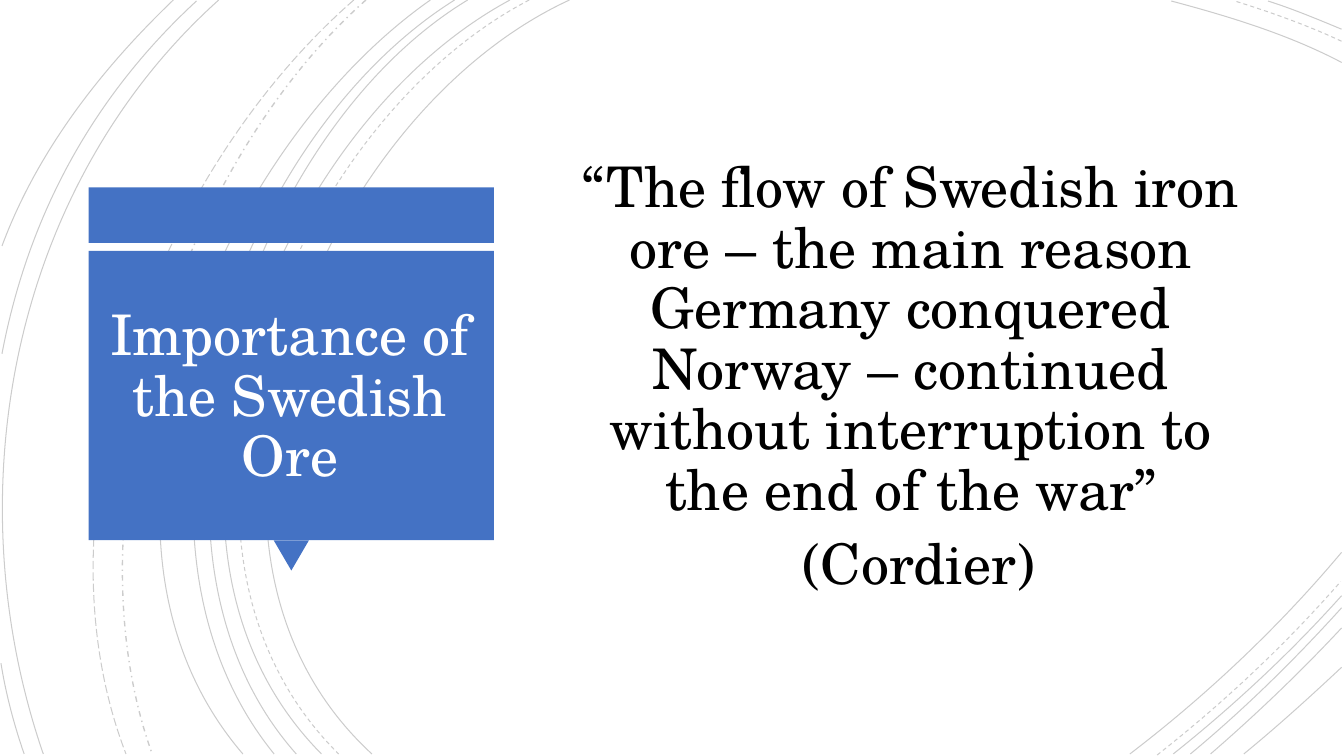
from lxml import etree
from pptx import Presentation
from pptx.dml.color import RGBColor
from pptx.enum import dml, shapes, text
from pptx.oxml.ns import qn
from pptx.util import Inches, Pt

BLUE = RGBColor(0x44, 0x72, 0xC4)
WHITE = RGBColor(0xFF, 0xFF, 0xFF)
BLACK = RGBColor(0x00, 0x00, 0x00)
FONT = "TeX Gyre Schola"

SOLID = dml.MSO_LINE.SOLID
DASH = dml.MSO_LINE.DASH
LONG_DASH = dml.MSO_LINE.LONG_DASH
DASH_DOT = dml.MSO_LINE.DASH_DOT

# Each arc: dash style, then start, two control points and end, in inches
ARCS = [
    (SOLID, (5.65, 0), (3.15, 1.15), (1.43, 5.4), (3.69, 7.48)),
    (SOLID, (13.31, 0.62), (12.78, 0.34), (12.18, 0.16), (11.62, 0.01)),
    (SOLID, (11.21, 7.48), (11.97, 6.9), (12.69, 6.22), (13.31, 5.48)),
    (DASH, (5.25, 0), (2.85, 1.25), (1.23, 5.37), (3.36, 7.48)),
    (DASH, (13.31, 0.41), (12.97, 0.25), (12.6, 0.12), (12.25, 0.01)),
    (DASH, (11.48, 7.49), (12.13, 6.98), (12.75, 6.4), (13.3, 5.77)),
    (SOLID, (5.06, 0), (2.7, 1.27), (1.1, 5.37), (3.19, 7.48)),
    (SOLID, (13.31, 0.29), (13.07, 0.19), (12.83, 0.09), (12.58, 0.01)),
    (SOLID, (11.64, 7.48), (12.23, 7.01), (12.8, 6.48), (13.31, 5.91)),
    (SOLID, (4.64, 0), (2.44, 1.33), (1.1, 5.41), (2.94, 7.48)),
    (SOLID, (11.81, 7.48), (12.34, 7.04), (12.84, 6.55), (13.31, 6.03)),
    (SOLID, (4.51, 0), (2.31, 1.38), (0.97, 5.33), (2.72, 7.48)),
    (SOLID, (12.01, 7.48), (12.46, 7.09), (12.9, 6.67), (13.31, 6.23)),
    (SOLID, (4.27, 0), (2.17, 1.47), (0.53, 5.29), (2.41, 7.48)),
    (SOLID, (12.34, 7.48), (12.67, 7.21), (12.99, 6.92), (13.31, 6.62)),
    (DASH_DOT, (3.63, 0), (1.76, 1.66), (0.65, 5.09), (1.51, 7.48)),
    (LONG_DASH, (3.51, 0), (1.57, 1.69), (0.29, 4.99), (1.25, 7.48)),
    (SOLID, (2.17, 0), (0.11, 1.85), (-0.46, 4.9), (0.43, 7.48)),
    (SOLID, (1.95, 0.01), (0.92, 0.96), (0.28, 2.14), (0.02, 3.51)),
    (SOLID, (0.01, 6.58), (0.06, 6.89), (0.14, 7.19), (0.24, 7.48)),
    (SOLID, (1.72, 0), (1, 0.69), (0.37, 1.5), (0.02, 2.44)),
]


def set_attributes(target, values):
    for name, value in values.items():
        setattr(target, name, value)


def bend(freeform):
    """Turn the three line segments of a freeform into one cubic curve."""
    segments = list(freeform.element.iter(qn("a:lnTo")))
    outline = segments[0].getparent()
    curve = etree.SubElement(outline, qn("a:cubicBezTo"))
    for segment in segments:
        curve.append(segment[0])
        outline.remove(segment)


def add_arcs(slide, left, top):
    """Faint arcs, offset from the given corner."""
    group = slide.shapes.add_group_shape()
    for dash, *controls in ARCS:
        points = [(left + Inches(x), top + Inches(y)) for x, y in controls]
        builder = group.shapes.build_freeform(*points[0], scale=1.0)
        builder.add_line_segments(points[1:], close=False)
        arc = builder.convert_to_shape()
        bend(arc)
        arc.shadow.inherit = False
        arc.fill.background()
        arc.line.color.rgb = BLACK
        set_attributes(arc.line, {
            "width": Pt(1 if dash == DASH_DOT else 0.75), "dash_style": dash})
        color = next(arc.element.spPr.iter(qn("a:srgbClr")))
        etree.SubElement(color, qn("a:alpha"), val="20000")


def fill_placeholder(placeholder, box, paragraphs, color, space_before):
    set_attributes(placeholder, dict(zip(("left", "top", "width", "height"), box)))
    frame = placeholder.text_frame
    frame.text = "\n".join(paragraphs)
    set_attributes(frame, {
        "word_wrap": True,
        "auto_size": text.MSO_AUTO_SIZE.NONE,
        "vertical_anchor": text.MSO_ANCHOR.MIDDLE,
    })
    for paragraph in frame.paragraphs:
        set_attributes(paragraph, {
            "alignment": text.PP_ALIGN.CENTER,
            "line_spacing": 0.9,
            "space_before": Pt(space_before),
        })
        properties = paragraph._p.get_or_add_pPr()
        properties.set("marL", "0")
        properties.set("indent", "0")
        etree.SubElement(properties, qn("a:buNone"))
        for run in paragraph.runs:
            set_attributes(run.font, {"name": FONT, "size": Pt(40)})
            run.font.color.rgb = color
    # Bring the text in front of the shapes drawn so far
    placeholder.element.getparent().append(placeholder.element)


def add_title_panel(slide, left, top, width, height):
    """Blue band, pointer and panel with the title on it."""
    panel_top = top + Inches(0.63)
    panel_height = height - Inches(0.93)
    pointer_width = Inches(0.35)
    rectangle = shapes.MSO_SHAPE.RECTANGLE
    parts = [
        (rectangle, left, top, width, Inches(0.55), 0),
        (shapes.MSO_SHAPE.ISOSCELES_TRIANGLE, left + (width - pointer_width) // 2,
         panel_top + panel_height, pointer_width, Inches(0.3), 180),
        (rectangle, left, panel_top, width, panel_height, 0),
    ]
    group = slide.shapes.add_group_shape()
    for kind, *box, rotation in parts:
        shape = group.shapes.add_shape(kind, *box)
        shape.rotation = rotation
        shape.shadow.inherit = False
        shape.fill.solid()
        shape.fill.fore_color.rgb = BLUE
        shape.line.fill.background()
    title_box = (left + Inches(0.11), panel_top + Inches(0.15),
                 width - Inches(0.25), panel_height - Inches(0.25))
    fill_placeholder(slide.shapes.title, title_box,
                     ["Importance of the Swedish Ore"], WHITE, 0)


def add_quotation(slide, *box):
    quotation = [
        "“The flow of Swedish iron ore – the main reason Germany conquered Norway – "
        "continued without interruption to the end of the war”",
        " (Cordier)",
    ]
    fill_placeholder(slide.placeholders[1], box, quotation, BLACK, 10)


def main():
    presentation = Presentation()
    set_attributes(presentation, {
        "slide_width": Inches(40 / 3), "slide_height": Inches(7.5)})
    slide = presentation.slides.add_slide(presentation.slide_layouts[1])
    add_arcs(slide, Inches(0), Inches(0))
    add_title_panel(slide, Inches(0.88), Inches(1.86), Inches(4.02), Inches(3.8))
    add_quotation(slide, Inches(5.6), Inches(0.88), Inches(6.87), Inches(5.74))
    presentation.save("out.pptx")


if __name__ == "__main__":
    main()
